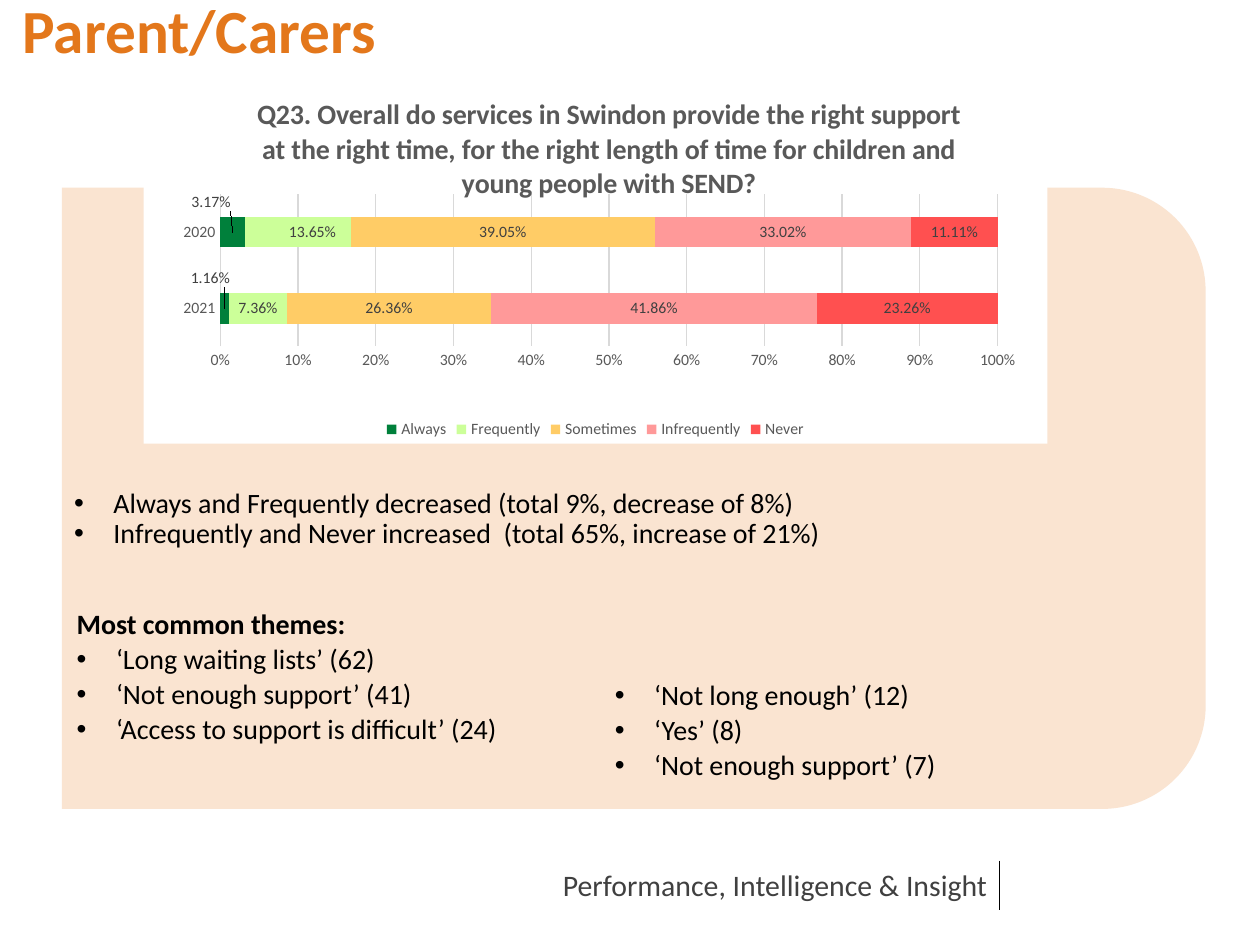
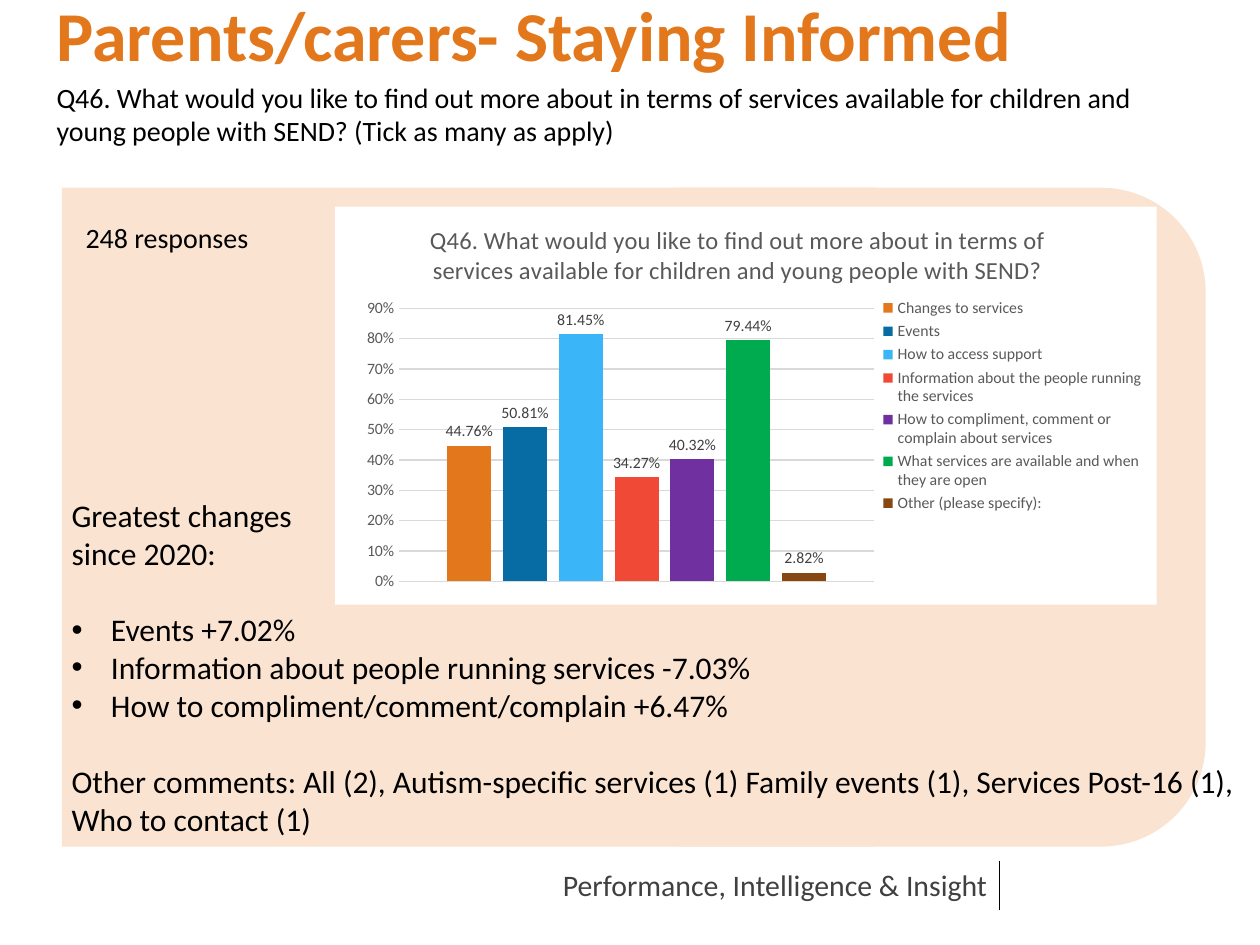
from lxml import etree
from pptx import Presentation
from pptx.chart.data import CategoryChartData
from pptx.dml.color import RGBColor
from pptx.enum.chart import XL_CHART_TYPE, XL_LABEL_POSITION, XL_LEGEND_POSITION, XL_TICK_MARK
from pptx.enum.shapes import MSO_CONNECTOR, MSO_SHAPE
from pptx.enum.text import PP_ALIGN
from pptx.oxml import parse_xml
from pptx.oxml.ns import nsdecls, qn
from pptx.util import Pt

STACKED, CLUSTERED = XL_CHART_TYPE.BAR_STACKED_100, XL_CHART_TYPE.COLUMN_CLUSTERED
CENTER, OUTSIDE = XL_LABEL_POSITION.CENTER, XL_LABEL_POSITION.OUTSIDE_END
BOTTOM, RIGHT = XL_LEGEND_POSITION.BOTTOM, XL_LEGEND_POSITION.RIGHT
NO_TICK = XL_TICK_MARK.NONE
RECTANGLE, ROUNDED = MSO_SHAPE.RECTANGLE, MSO_SHAPE.ROUNDED_RECTANGLE
STRAIGHT = MSO_CONNECTOR.STRAIGHT
JUSTIFY = PP_ALIGN.JUSTIFY

FONT = "Calibri"
ORANGE = RGBColor(0xE3, 0x77, 0x1B)
PEACH = RGBColor(0xFA, 0xE4, 0xD1)
BLACK = RGBColor(0x00, 0x00, 0x00)
DARK_GREY = RGBColor(0x40, 0x40, 0x40)
MID_GREY = RGBColor(0x59, 0x59, 0x59)
GRID_GREY = RGBColor(0xD9, 0xD9, 0xD9)
DARK_GREEN = RGBColor(0x00, 0x80, 0x3B)
LIME = RGBColor(0xCC, 0xFF, 0x99)
AMBER = RGBColor(0xFF, 0xCC, 0x66)
PINK = RGBColor(0xFF, 0x99, 0x99)
RED = RGBColor(0xFF, 0x50, 0x50)
BLUE = RGBColor(0x06, 0x6C, 0xA3)
SKY = RGBColor(0x3A, 0xB5, 0xF8)
CORAL = RGBColor(0xF0, 0x49, 0x35)
PURPLE = RGBColor(0x70, 0x30, 0xA0)
GREEN = RGBColor(0x00, 0xAA, 0x4F)
BROWN = RGBColor(0x88, 0x47, 0x10)

# Text formats: size, colour, bold, paragraph settings, bullet
BODY = {"size": 16, "color": BLACK, "bold": False, "para": {}, "bullet": False}
TITLE = BODY | {"size": 35, "color": ORANGE, "bold": True}
BIG_TITLE = TITLE | {"size": 40}
QUESTION = BODY | {"para": {"space_before": Pt(3)}}
FOOTER = BODY | {"size": 17, "color": DARK_GREY, "para": {"alignment": JUSTIFY}}
FINDING = BODY | {"para": {"line_spacing": 0.9}, "bullet": True}
THEME = FINDING | {"para": {"line_spacing": 0.9, "space_before": Pt(2.8)}}
THEME_HEAD = THEME | {"bold": True, "bullet": False}
NOTE = BODY | {"size": 18}
NOTE_GAP = NOTE | {"para": {"space_before": Pt(22)}}
CHANGE = NOTE | {"bullet": True}
CHANGE_GAP = NOTE_GAP | {"bullet": True}


def add_text(page, place, lines, wrap=True):
    """Add a text box of (text, format) lines."""
    frame = page.shapes.add_textbox(*map(Pt, place)).text_frame
    frame.word_wrap = wrap
    for number, (text, look) in enumerate(lines):
        para = frame.add_paragraph() if number else frame.paragraphs[0]
        for name, value in look["para"].items():
            setattr(para, name, value)
        if look["bullet"]:
            props = para._p.get_or_add_pPr()
            props.set("marL", str(Pt(22.5)))
            props.set("indent", str(-Pt(22.5)))
            etree.SubElement(props, qn("a:buFont")).set("typeface", "Arial")
            etree.SubElement(props, qn("a:buChar")).set("char", "•")
        span = para.add_run()
        span.text = text
        span.font.name = FONT
        span.font.size = Pt(look["size"])
        span.font.bold = look["bold"]
        span.font.color.rgb = look["color"]


def set_layout(parent, index, values):
    """Give a chart part a manual layout of fractions of the chart."""
    layout = parent.find(qn("c:layout"))
    if layout is None:
        layout = etree.Element(qn("c:layout"))
        parent.insert(index, layout)
    manual = etree.SubElement(layout, qn("c:manualLayout"))
    for name, value in values.items():
        etree.SubElement(manual, qn("c:" + name)).set("val", str(value))


deck = Presentation()
deck.slide_width, deck.slide_height = Pt(720), Pt(540)

# Panel and footer on both slides
pages = []
for panel_height in (355, 376.5):
    page = deck.slides.add_slide(deck.slide_layouts[6])
    pages.append(page)
    for preset, left, width in ((RECTANGLE, 35.3, 464.4), (ROUNDED, 331.2, 357.8)):
        panel = page.shapes.add_shape(preset, Pt(left), Pt(107.3), Pt(width), Pt(panel_height))
        panel.shadow.inherit = False
        panel.fill.solid()
        panel.fill.fore_color.rgb = PEACH
        panel.line.fill.background()
    add_text(page, (314.6, 491.8, 296, 28),
             [("Performance, Intelligence & Insight", FOOTER)], wrap=False)
    rule = page.shapes.add_connector(STRAIGHT, Pt(571), Pt(491.8), Pt(571), Pt(519.8))
    rule.line.color.rgb = BLACK
    rule.line.width = Pt(0.75)
    etree.SubElement(rule._element.spPr, qn("a:effectLst"))
support_page, informed_page = pages

# Titles
add_text(support_page, (5.8, -7.9, 652, 53), [("Parent/Carers", TITLE)])
add_text(informed_page, (25.2, -8.6, 652, 100), [
    ("Parents/carers- Staying Informed", BIG_TITLE),
    ("Q46. What would you like to find out more about in terms of services available for "
     "children and young people with SEND? (Tick as many as apply)", QUESTION),
])

# Charts
charts = [
    {"page": support_page, "kind": STACKED, "place": (82, 41, 516.5, 212.5),
     "title": "Q23. Overall do services in Swindon provide the right support at the right "
              "time, for the right length of time for children and young people with SEND?",
     "title_size": 16, "title_bold": True, "title_at": {"x": 0.12, "y": 0.05},
     "plot": {"x": 0.085, "y": 0.329, "w": 0.86, "h": 0.41},
     "gap": 150, "overlap": 100, "legend": BOTTOM, "labels": CENTER,
     "categories": ["2021", "2020"],
     "series": [("Always", DARK_GREEN, (0.0116, 0.0317)),
                ("Frequently", LIME, (0.0736, 0.1365)),
                ("Sometimes", AMBER, (0.2636, 0.3905)),
                ("Infrequently", PINK, (0.4186, 0.3302)),
                ("Never", RED, (0.2326, 0.1111))],
     "moved_labels": [(0, 0, -0.016, -0.08), (0, 1, -0.024, -0.08), (1, 1, 0.016, 0)]},
    {"page": informed_page, "kind": CLUSTERED, "place": (191.5, 118, 469.5, 227.5),
     "title": "Q46. What would you like to find out more about in terms of services "
              "available for children and young people with SEND?",
     "title_size": 14, "title_bold": False, "title_at": {"x": 0.11, "y": 0.03},
     "plot": {"x": 0.078, "y": 0.256, "w": 0.578, "h": 0.686},
     "gap": 219, "overlap": -27, "legend": RIGHT, "labels": OUTSIDE,
     "categories": ["1"],
     "series": [("Changes to services", ORANGE, (0.4476,)),
                ("Events", BLUE, (0.5081,)),
                ("How to access support", SKY, (0.8145,)),
                ("Information about the people running the services", CORAL, (0.3427,)),
                ("How to compliment, comment or complain about services", PURPLE, (0.4032,)),
                ("What services are available and when they are open", GREEN, (0.7944,)),
                ("Other (please specify):", BROWN, (0.0282,))],
     "moved_labels": []},
]
for plan in charts:
    data = CategoryChartData(number_format="0.00%")
    data.categories = plan["categories"]
    for name, color, values in plan["series"]:
        data.add_series(name, values)
    chart = plan["page"].shapes.add_chart(plan["kind"], *map(Pt, plan["place"]), data).chart
    chart.font.name, chart.font.size = FONT, Pt(10)
    space = chart._chartSpace
    space.find(qn("c:chart")).addnext(parse_xml(
        f'<c:spPr {nsdecls("c", "a")}><a:solidFill><a:srgbClr val="FFFFFF"/></a:solidFill>'
        "<a:ln><a:noFill/></a:ln></c:spPr>"))

    # Title and plot area
    para = chart.chart_title.text_frame.paragraphs[0]
    span = para.add_run()
    span.text = plan["title"]
    span.font.name, span.font.size = FONT, Pt(plan["title_size"])
    span.font.bold = plan["title_bold"]
    span.font.color.rgb = MID_GREY
    edges = {"xMode": "edge", "yMode": "edge"}
    set_layout(chart.chart_title._element, 1, edges | plan["title_at"])
    set_layout(space.find(".//" + qn("c:plotArea")), 0,
               {"layoutTarget": "inner"} | edges | plan["plot"])

    # Axes and legend
    chart.has_legend = True
    chart.legend.position = plan["legend"]
    chart.legend.include_in_layout = False
    years, shares = chart.category_axis, chart.value_axis
    years.visible = plan["kind"] == STACKED
    shares.tick_labels.number_format = "0%"
    shares.tick_labels.number_format_is_linked = False
    shares.format.line.fill.background()
    for axis in (years, shares):
        axis.major_tick_mark = axis.minor_tick_mark = NO_TICK
    for line in (years.format.line, shares.major_gridlines.format.line):
        line.color.rgb = GRID_GREY
        line.width = Pt(0.75)
    for font in (years.tick_labels.font, shares.tick_labels.font, chart.legend.font):
        font.name, font.size = FONT, Pt(9)
        font.color.rgb = MID_GREY

    # Bars and their labels
    plot = chart.plots[0]
    plot.gap_width, plot.overlap = plan["gap"], plan["overlap"]
    plot.vary_by_categories = False
    label_fonts = []
    for series, (name, color, values) in zip(plot.series, plan["series"]):
        series.format.fill.solid()
        series.format.fill.fore_color.rgb = color
        labels = series.data_labels
        labels.show_value = True
        labels.number_format = "0.00%"
        labels.number_format_is_linked = False
        labels.position = plan["labels"]
        label_fonts.append(labels.font)
    for row, point, shift_x, shift_y in plan["moved_labels"]:
        label = plot.series[row].points[point].data_label
        label.position = plan["labels"]
        label_fonts.append(label.font)
        set_layout(label._dLbl, 1, {"x": shift_x, "y": shift_y})
    for font in label_fonts:
        font.name, font.size = FONT, Pt(9)
        font.color.rgb = DARK_GREY

# Support: findings and themes
add_text(support_page, (35.3, 276, 648, 45), [
    ("Always and Frequently decreased (total 9%, decrease of 8%)", FINDING),
    ("Infrequently and Never increased  (total 65%, increase of 21%)", FINDING),
])
add_text(support_page, (36.7, 345, 300, 90), [
    ("Most common themes:", THEME_HEAD),
    ("‘Long waiting lists’ (62)", THEME),
    ("‘Not enough support’ (41)", THEME),
    ("‘Access to support is difficult’ (24)", THEME),
])
add_text(support_page, (344.2, 385.8, 300, 70), [
    ("‘Not long enough’ (12)", THEME),
    ("‘Yes’ (8)", THEME),
    ("‘Not enough support’ (7)", THEME),
])

# Staying informed: responses and changes
add_text(informed_page, (41.8, 122.4, 143, 27), [("248 responses", BODY)])
add_text(informed_page, (33.8, 280, 686, 225), [
    ("Greatest changes", NOTE),
    ("since 2020:", NOTE),
    ("Events +7.02%", CHANGE_GAP),
    ("Information about people running services -7.03%", CHANGE),
    ("How to compliment/comment/complain +6.47%", CHANGE),
    ("Other comments: All (2), Autism-specific services (1) Family events (1), "
     "Services Post-16 (1),", NOTE_GAP),
    ("Who to contact (1)", NOTE),
])

deck.save("out.pptx")
